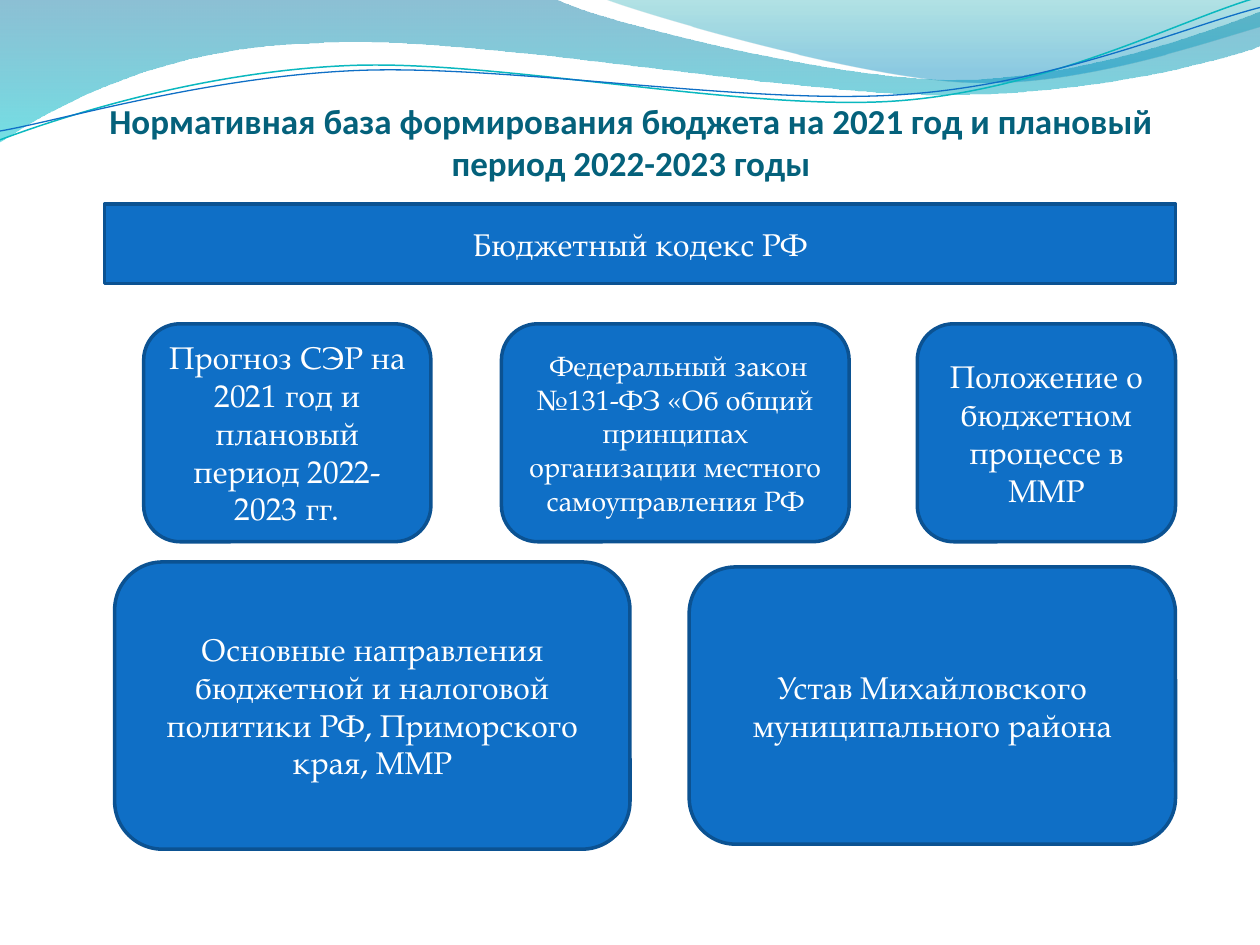
"""Build a slide on the legal basis of the district budget."""
from math import cos, radians, sin
from lxml.etree import SubElement
from pptx import Presentation
from pptx.dml.color import RGBColor as RGB
from pptx.enum.shapes import MSO_SHAPE as Shape
from pptx.enum.text import MSO_ANCHOR as Anchor, PP_ALIGN as Align
from pptx.oxml.ns import qn
from pptx.util import Inches, Pt

COLORS = {
    "title": "04617B", "box": "0F6FC6", "edge": "0B5292", "text": "FFFFFF",
    "teal": "0AB8BF", "deep": "0074A1", "aqua": "00C6CF",
    "mint": "00A1A9", "sky": "008BBF",
}
SERIF = "TeX Gyre Pagella"
TILT = -2.7

WAVES = [
    ((0, 0), [
        [(4.4, -0.01)],
        [(4.76, 0.17), (6.64, 0.63), (7.58, 0.63)],
        [(8.53, 0.63), (9.58, 0.26), (10, 0.09)],
        [(10.01, 0.36)],
        [(9.83, 0.44), (8.7, 0.76), (7.46, 0.75)],
        [(6.22, 0.75), (3.82, 0.28), (2.57, 0.34)],
        [(1.29, 0.36), (0.46, 0.83), (-0.01, 1.13)],
        [(0, 0)],
    ], [(0, "deep", 45), (1, "aqua", 55)]),
    ((4.79, -0.01), [
        [(5.09, 0.11), (6.82, 0.62), (7.69, 0.65)],
        [(8.56, 0.69), (9.61, 0.32), (10, 0.21)],
        [(10, 0)],
        [(4.79, -0.01)],
    ], [(0, "mint", 30), (0.8, "sky", 45)]),
]
CURVES = [
    ((0, 1.11), [
        [(0.48, 0.93), (1.58, 0.57), (2.77, 0.52)],
        [(3.95, 0.47), (5.93, 0.89), (7.13, 0.8)],
        [(8.33, 0.71), (9.38, 0.15), (9.98, -0.02)],
    ], (4.99, 0.58), "teal", 0.85),
    ((0, 1.04), [
        [(0.47, 0.96), (1.64, 0.61), (2.83, 0.56)],
        [(4.03, 0.51), (5.97, 0.84), (7.17, 0.75)],
        [(8.36, 0.67), (9.41, 0.21), (10, 0.06)],
    ], (5, 0.59), "box", 0.75),
]
ROUND = Shape.ROUNDED_RECTANGLE
BOXES = [
    (Shape.RECTANGLE, (0.83, 1.62, 8.5, 0.63), 18, "Бюджетный кодекс РФ"),
    (ROUND, (1.14, 2.57, 2.28, 1.73), 18,
     "Прогноз СЭР на 2021 год и плановый период 2022-2023 гг."),
    (ROUND, (3.98, 2.57, 2.76, 1.73), 16,
     " Федеральный закон №131-ФЗ «Об общий принципах организации "
     "местного самоуправления РФ"),
    (ROUND, (7.28, 2.57, 2.05, 1.73), 18,
     "Положение о бюджетном процессе в ММР"),
    (ROUND, (0.91, 4.46, 4.09, 2.28), 18,
     "Основные направления бюджетной и налоговой политики РФ, "
     "Приморского края, ММР"),
    (ROUND, (5.47, 4.5, 3.86, 2.2), 18,
     "Устав Михайловского муниципального района"),
]


def color(name):
    return RGB.from_string(COLORS[name])


def turn(point, mid, angle):
    """Turn a point clockwise about a middle point."""
    x, y = point[0] - mid[0], point[1] - mid[1]
    c, s = cos(radians(angle)), sin(radians(angle))
    return mid[0] + x * c - y * s, mid[1] + x * s + y * c


def add_path(slide, start, parts, close):
    """Add an outline whose three-point parts are cubic curves."""
    points = [tuple(map(Inches, p)) for part in parts for p in part]
    pen = slide.shapes.build_freeform(*map(Inches, start))
    pen.add_line_segments(points, close=close)
    shape = pen.convert_to_shape()
    shape.shadow.inherit = False
    lines = iter(list(shape.element.iter(qn("a:lnTo"))))
    for part in parts:
        head, *rest = [next(lines) for _ in part]
        if rest:
            head.tag = qn("a:cubicBezTo")
        for line in rest:
            head.append(line[0])
            line.getparent().remove(line)
    return shape


def add_wave(slide, start, parts, stops):
    shape = add_path(slide, start, parts, True)
    shape.line.fill.background()
    shape.fill.gradient()
    shape.fill.gradient_angle = 270
    for stop, (place, name, _) in zip(shape.fill.gradient_stops, stops):
        stop.position = place
        stop.color.rgb = color(name)
    tints = shape.element.spPr.iter(qn("a:srgbClr"))
    for tint, (_, _, alpha) in zip(tints, stops):
        SubElement(tint, qn("a:alpha"), val=str(alpha * 1000))


def add_curve(slide, start, parts, mid, name, width):
    flat = [[turn(p, mid, -TILT) for p in part] for part in parts]
    shape = add_path(slide, turn(start, mid, -TILT), flat, False)
    shape.rotation = TILT
    shape.fill.background()
    shape.line.color.rgb = color(name)
    shape.line.width = Pt(width)


def write(frame, text, tone, anchor, **style):
    frame.word_wrap = True
    frame.vertical_anchor = anchor
    para = frame.paragraphs[0]
    para.alignment = Align.CENTER
    run = para.add_run()
    run.text = text
    run.font.color.rgb = color(tone)
    for key, value in style.items():
        setattr(run.font, key, value)


def add_title(slide, text):
    area = map(Inches, (0.51, 0.21, 9, 1.25))
    frame = slide.shapes.add_textbox(*area).text_frame
    for side in ("left", "right", "bottom"):
        setattr(frame, f"margin_{side}", 0)
    write(frame, text, "title", Anchor.BOTTOM,
          name="Calibri", size=Pt(20), bold=True)


def add_box(slide, kind, area, size, text):
    box = slide.shapes.add_shape(kind, *map(Inches, area))
    box.shadow.inherit = False
    box.fill.solid()
    box.fill.fore_color.rgb = color("box")
    box.line.color.rgb = color("edge")
    box.line.width = Pt(2)
    write(box.text_frame, text, "text", Anchor.MIDDLE,
          name=SERIF, size=Pt(size))


def main():
    deck = Presentation()
    deck.slide_width, deck.slide_height = Inches(10), Inches(7.5)
    slide = deck.slides.add_slide(deck.slide_layouts[6])
    for wave in WAVES:
        add_wave(slide, *wave)
    for curve in CURVES:
        add_curve(slide, *curve)
    add_title(slide, "Нормативная база формирования бюджета на 2021 год "
                     "и плановый период 2022-2023 годы")
    for box in BOXES:
        add_box(slide, *box)
    deck.save("out.pptx")


if __name__ == "__main__":
    main()
